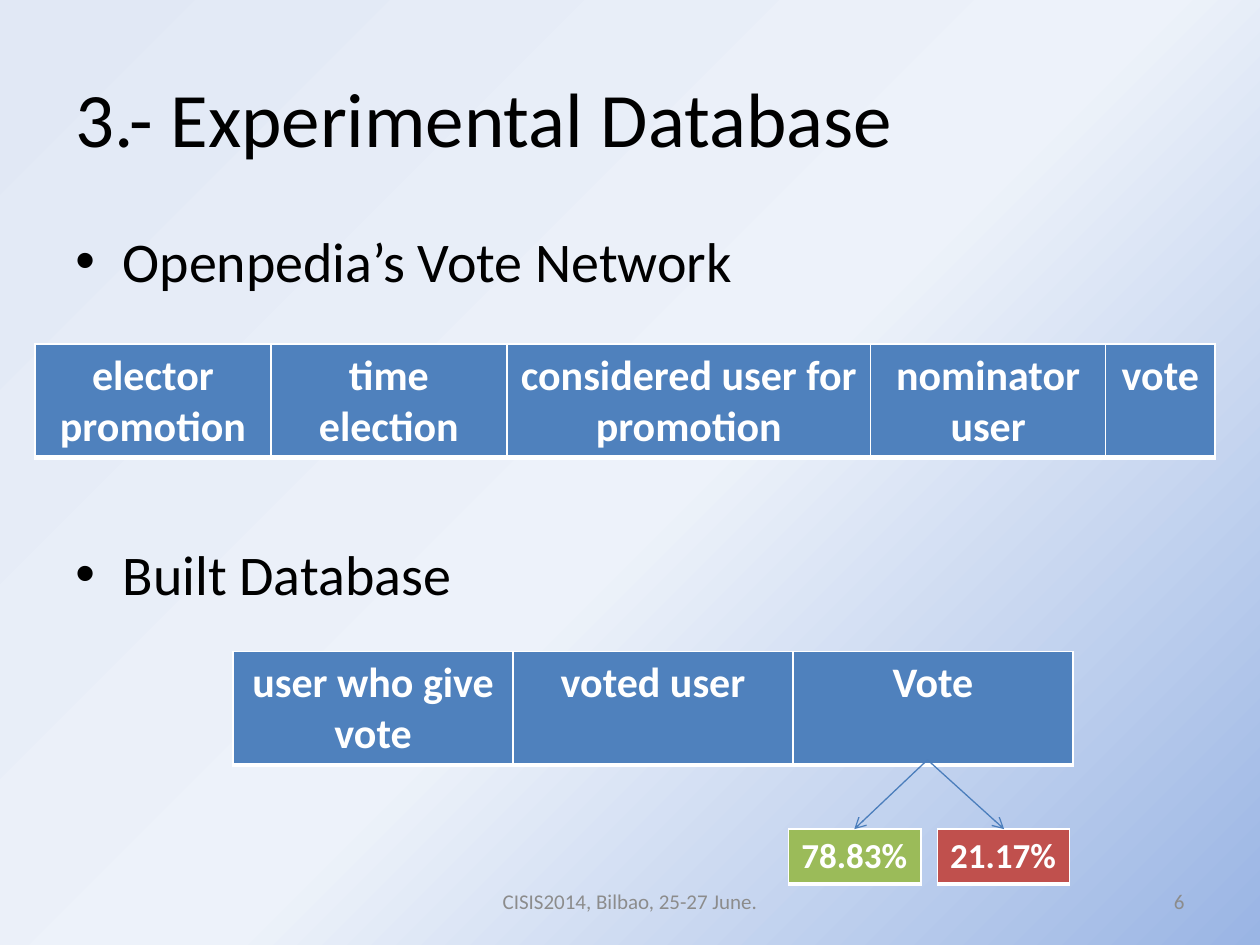
from pptx import Presentation
from pptx.dml.color import RGBColor
from pptx.enum.shapes import MSO_CONNECTOR as Connector
from pptx.enum.text import MSO_ANCHOR as Anchor, PP_ALIGN as Align
from pptx.oxml import parse_xml
from pptx.oxml.ns import nsdecls
from pptx.util import Pt
from lxml.etree import SubElement

DRAWING = "{http://schemas.openxmlformats.org/drawingml/2006/main}"
BLACK, GREY, WHITE = "000000", "8C8C8C", "FFFFFF"
BLUE, GREEN, RED, ARROW_BLUE = "4F81BD", "9BBB59", "C0504D", "4B7EBC"


def color(value):
    return RGBColor.from_string(value)


class SlideBuilder:
    font = "Calibri"
    borders = {"lnL": 1, "lnR": 1, "lnT": 1, "lnB": 3}

    def __init__(self, slide):
        self.slide = slide

    def background(self, stops):
        stop_xml = "".join(
            f'<a:gs pos="{position * 1000}"><a:srgbClr val="{value}"/></a:gs>'
            for position, value in stops
        )
        background = parse_xml(
            f'<p:bg {nsdecls("p", "a")}><p:bgPr><a:gradFill rotWithShape="1">'
            f'<a:gsLst>{stop_xml}</a:gsLst><a:path path="circle">'
            '<a:fillToRect l="100000" t="100000"/></a:path></a:gradFill>'
            "<a:effectLst/></p:bgPr></p:bg>"
        )
        self.slide.element.cSld.insert(0, background)

    def format(self, paragraph, size, text_color, align, bold=False):
        paragraph.alignment = align
        for run in paragraph.runs:
            run.font.name = self.font
            run.font.size = Pt(size)
            run.font.bold = bold
            run.font.color.rgb = color(text_color)

    def text(self, box, text, size, text_color, align=Align.LEFT, anchor=Anchor.MIDDLE):
        shape = self.slide.shapes.add_textbox(*map(Pt, box))
        text_frame = shape.text_frame
        text_frame.word_wrap = True
        text_frame.vertical_anchor = anchor
        text_frame.text = text
        for paragraph in text_frame.paragraphs:
            self.format(paragraph, size, text_color, align)
        return text_frame

    def bullets(self, box, items, size, gap):
        text_frame = self.text(box, "\n".join(items), size, BLACK, anchor=Anchor.TOP)
        for index, paragraph in enumerate(text_frame.paragraphs):
            paragraph.space_before = Pt(gap if index else 0)
            properties = paragraph._p.get_or_add_pPr()
            properties.set("marL", str(Pt(27)))
            properties.set("indent", str(Pt(-27)))
            SubElement(properties, DRAWING + "buFont", typeface="Arial")
            SubElement(properties, DRAWING + "buChar", char="•")

    def table(self, left, top, height, columns, fill, size=24, align=Align.CENTER):
        widths = [width for _, width in columns]
        shape = self.slide.shapes.add_table(
            1, len(columns), Pt(left), Pt(top), Pt(sum(widths)), Pt(height)
        )
        table = shape.table
        table.horz_banding = False
        for index, (label, width) in enumerate(columns):
            table.columns[index].width = Pt(width)
            cell = table.cell(0, index)
            cell.text = label
            self.format(cell.text_frame.paragraphs[0], size, WHITE, align, bold=True)
            self.cell_borders(cell)
            cell.fill.solid()
            cell.fill.fore_color.rgb = color(fill)

    def cell_borders(self, cell):
        properties = cell._tc.get_or_add_tcPr()
        for side, width in self.borders.items():
            line = SubElement(properties, DRAWING + side, w=str(Pt(width)))
            fill = SubElement(line, DRAWING + "solidFill")
            SubElement(fill, DRAWING + "srgbClr", val=WHITE)

    def arrow(self, start, end):
        connector = self.slide.shapes.add_connector(
            Connector.STRAIGHT, *map(Pt, start + end)
        )
        connector.line.color.rgb = color(ARROW_BLUE)
        connector.line.width = Pt(0.75)
        SubElement(connector.line._get_or_add_ln(), DRAWING + "tailEnd", type="arrow")
        SubElement(connector._element.spPr, DRAWING + "effectLst")


def main():
    presentation = Presentation()
    presentation.slide_width, presentation.slide_height = Pt(720), Pt(540)
    builder = SlideBuilder(presentation.slides.add_slide(presentation.slide_layouts[6]))

    builder.background([(0, "9AB5E4"), (47, "EDF2FA"), (100, "E1E8F5")])
    builder.text((36, 21.6, 648, 90), "3.- Experimental Database", 44, BLACK)
    builder.bullets(
        (36, 126, 648, 356.4), ["Openpedia’s Vote Network", "Built Database"], 32, 140.4
    )
    builder.text(
        (246, 500.5, 228, 28.8), "CISIS2014, Bilbao, 25-27 June.", 12, GREY, Align.CENTER
    )
    builder.text((516, 500.5, 168, 28.8), "6", 12, GREY, Align.RIGHT)

    source_columns = [
        ("elector promotion", 134.8),
        ("time election", 134.8),
        ("considered user for promotion", 208),
        ("nominator user", 134.2),
        ("vote", 62.6),
    ]
    built_columns = [
        (label, 160) for label in ("user who give vote", "voted user", "Vote")
    ]
    builder.table(20, 196.5, 64.8, source_columns, BLUE)
    builder.table(133.2, 372.3, 64.8, built_columns, BLUE)

    vote_shares = [("78.83%", GREEN, 450.7, 488.2), ("21.17%", RED, 535.7, 573.8)]
    for share, fill, left, arrow_end in vote_shares:
        builder.table(left, 473.8, 31.2, [(share, 75.6)], fill, 20, Align.LEFT)
        builder.arrow((530, 434.2), (arrow_end, 473.8))

    presentation.save("out.pptx")


if __name__ == "__main__":
    main()
